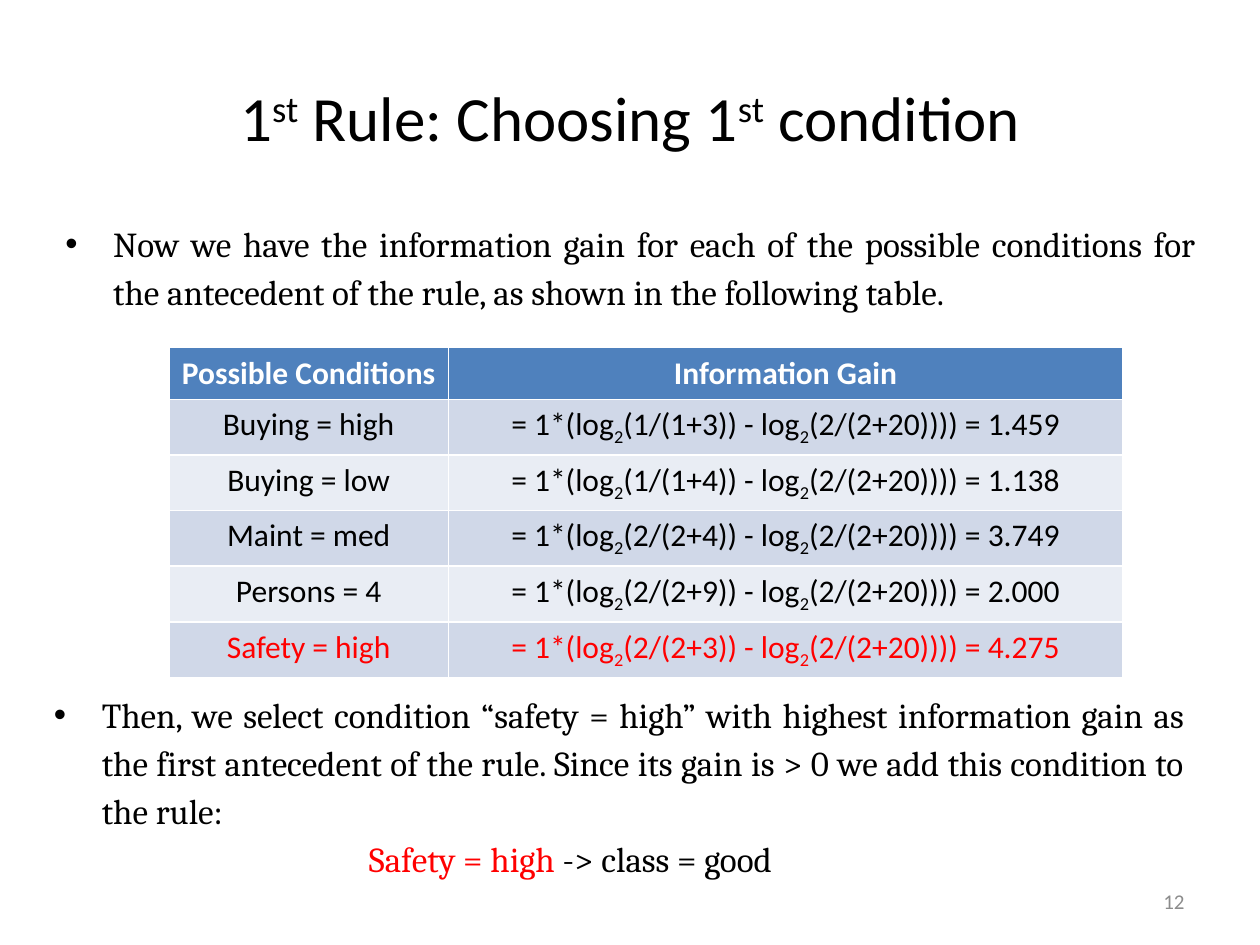
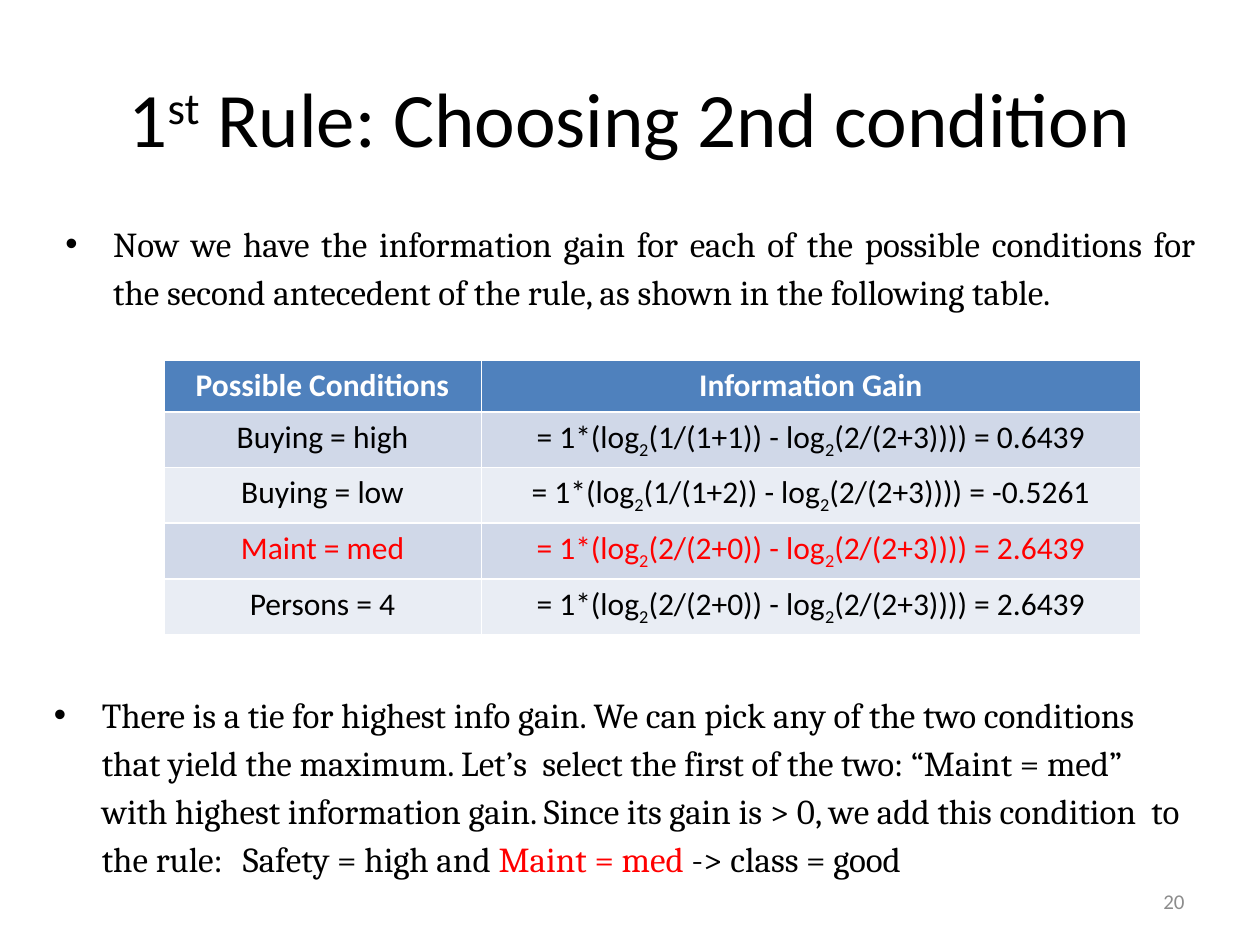
from dataclasses import dataclass

from lxml import etree
from pptx import Presentation
from pptx import util as u
from pptx.dml.color import RGBColor
from pptx.enum import text
from pptx.oxml import ns


@dataclass(frozen=True)
class Theme:
    """Colours, fonts and type sizes that the slides share."""

    ink: RGBColor = RGBColor(0x00, 0x00, 0x00)
    chosen: RGBColor = RGBColor(0xFF, 0x00, 0x00)
    header: RGBColor = RGBColor(0x4F, 0x81, 0xBD)
    header_ink: RGBColor = RGBColor(0xFF, 0xFF, 0xFF)
    bands: tuple = (RGBColor(0xD0, 0xD8, 0xE8), RGBColor(0xE9, 0xED, 0xF4))
    page_ink: RGBColor = RGBColor(0x8C, 0x8C, 0x8C)
    heading_font: str = "Calibri"
    body_font: str = "Cambria"
    body_size: int = 20
    table_size: int = 18
    page_size: int = 12
    superscript: int = 30
    subscript: int = -25
    line_spacing: float = 1.14


THEME = Theme()
ALIGN = text.PP_ALIGN
TITLE_BOX = (0.5, 0.3, 9, 1.25)
INTRO_BOX = (0.42, 1.67, 9.17, 0.87)
DECISION_BOX = (0.33, 5.41, 9.17, 1.64)
PAGE_BOX = (7.17, 6.95, 2.33, 0.4)
ROW_HEIGHT = 0.41
HANGING = 0.38
RULE_INDENT = 2.5


def inches(box):
    """Convert a box of numbers to lengths."""
    return [u.Inches(side) for side in box]


def style(paragraph, font_name, size, color, align):
    """Set the look that all runs of a paragraph share."""
    paragraph.alignment = align
    paragraph.font.name = font_name
    paragraph.font.size = u.Pt(size)
    paragraph.font.color.rgb = color


def add_scripted(paragraph, parts, baseline):
    """Write parts in turn, raising or lowering every second one."""
    for index, part in enumerate(parts):
        run = paragraph.add_run()
        run.text = part
        if index % 2:
            run.font._element.set("baseline", str(baseline * 1000))


def add_colored(paragraph, spans):
    """Write spans, each a text with its own colour."""
    for wording, color in spans:
        run = paragraph.add_run()
        run.text = wording
        run.font.color.rgb = color


def indent(paragraph, left, bullet=False):
    """Indent a paragraph, with a hanging bullet if wanted."""
    properties = paragraph._p.get_or_add_pPr()
    properties.set("marL", str(u.Inches(left)))
    properties.set("indent", str(-u.Inches(left) if bullet else 0))
    if bullet:
        font = etree.SubElement(properties, ns.qn("a:buFont"))
        font.set("typeface", "Arial")
        etree.SubElement(properties, ns.qn("a:buChar")).set("char", "•")


def add_title(slide, box, parts, size):
    """Place the title, whose ordinals are raised."""
    title = slide.shapes.title
    title.left, title.top, title.width, title.height = inches(box)
    title.text_frame.vertical_anchor = text.MSO_ANCHOR.MIDDLE
    heading = title.text_frame.paragraphs[0]
    style(heading, THEME.heading_font, size, THEME.ink, ALIGN.CENTER)
    add_scripted(heading, parts, THEME.superscript)


def add_body(slide, box, paragraphs, align):
    """Add a bullet, and any further paragraphs as indented rule lines."""
    body = slide.shapes.add_textbox(*inches(box)).text_frame
    body.word_wrap = True
    body.auto_size = text.MSO_AUTO_SIZE.SHAPE_TO_FIT_TEXT
    for index, spans in enumerate(paragraphs):
        paragraph = body.add_paragraph() if index else body.paragraphs[0]
        paragraph.line_spacing = THEME.line_spacing
        indent(paragraph, RULE_INDENT if index else HANGING, bullet=not index)
        style(paragraph, THEME.body_font, THEME.body_size, THEME.ink, align)
        add_colored(paragraph, spans)


def fill_cell(cell, parts, fill, color, bold=False):
    """Fill a table cell and write its centred text."""
    cell.fill.solid()
    cell.fill.fore_color.rgb = fill
    paragraph = cell.text_frame.paragraphs[0]
    style(paragraph, THEME.heading_font, THEME.table_size, color, ALIGN.CENTER)
    paragraph.font.bold = bold
    add_scripted(paragraph, parts, THEME.subscript)


def add_gains(slide, origin, widths, before, gains, chosen):
    """Add the table of information gains, with the chosen condition marked."""
    box = (*origin, sum(widths), ROW_HEIGHT * (len(gains) + 1))
    table = slide.shapes.add_table(len(gains) + 1, len(widths), *inches(box)).table
    for column, width in zip(table.columns, widths):
        column.width = u.Inches(width)
    for cell, label in zip(table.rows[0].cells, ("Possible Conditions", "Information Gain")):
        fill_cell(cell, [label], THEME.header, THEME.header_ink, bold=True)
    for index, (condition, after, gain) in enumerate(gains):
        band = THEME.bands[index % 2]
        color = THEME.chosen if condition == chosen else THEME.ink
        formula = ["= 1*(log", "2", f"({after}) - log", "2", f"({before}))) = {gain}"]
        condition_cell, gain_cell = table.rows[index + 1].cells
        fill_cell(condition_cell, [condition], band, color)
        fill_cell(gain_cell, formula, band, color)


def add_page_number(slide, box, number):
    """Add the page number at the lower right."""
    footer = slide.shapes.add_textbox(*inches(box)).text_frame
    footer.word_wrap = True
    footer.vertical_anchor = text.MSO_ANCHOR.MIDDLE
    paragraph = footer.paragraphs[0]
    style(paragraph, THEME.heading_font, THEME.page_size, THEME.page_ink, ALIGN.RIGHT)
    paragraph.add_run().text = str(number)


def add_condition_slide(deck, title, title_size, antecedent, table, decision, align, page):
    """Add a slide that compares the gains and picks one condition."""
    slide = deck.slides.add_slide(deck.slide_layouts.get_by_name("Title Only"))
    intro = (
        "Now we have the information gain for each of the possible conditions for "
        f"the {antecedent} of the rule, as shown in the following table."
    )
    add_title(slide, TITLE_BOX, title, title_size)
    add_body(slide, INTRO_BOX, [[(intro, THEME.ink)]], ALIGN.JUSTIFY)
    add_gains(slide, **table)
    add_body(slide, DECISION_BOX, decision, align)
    add_page_number(slide, PAGE_BOX, page)


def main():
    """Build and save the deck."""
    deck = Presentation()
    deck.slide_width, deck.slide_height = inches((10, 7.5))
    outcome = ("-> class = good", THEME.ink)
    add_condition_slide(
        deck,
        title=["1", "st", " Rule: Choosing 1", "st", " condition"],
        title_size=36,
        antecedent="antecedent",
        table=dict(
            origin=(1.34, 2.76),
            widths=(2.22, 5.35),
            before="2/(2+20)",
            gains=[
                ("Buying = high", "1/(1+3)", "1.459"),
                ("Buying = low", "1/(1+4)", "1.138"),
                ("Maint = med", "2/(2+4)", "3.749"),
                ("Persons = 4", "2/(2+9)", "2.000"),
                ("Safety = high", "2/(2+3)", "4.275"),
            ],
            chosen="Safety = high",
        ),
        decision=[
            [(
                "Then, we select condition “safety = high” with highest information gain "
                "as the first antecedent of the rule. Since its gain is > 0 we add this "
                "condition to the rule:",
                THEME.ink,
            )],
            [("Safety = high ", THEME.chosen), outcome],
        ],
        align=ALIGN.JUSTIFY,
        page=12,
    )
    add_condition_slide(
        deck,
        title=["1", "st", " Rule: Choosing 2nd condition"],
        title_size=44,
        antecedent="second antecedent",
        table=dict(
            origin=(1.3, 2.86),
            widths=(2.52, 5.23),
            before="2/(2+3)",
            gains=[
                ("Buying = high", "1/(1+1)", "0.6439"),
                ("Buying = low", "1/(1+2)", "-0.5261"),
                ("Maint = med", "2/(2+0)", "2.6439"),
                ("Persons = 4", "2/(2+0)", "2.6439"),
            ],
            chosen="Maint = med",
        ),
        decision=[[
            (
                "There is a tie for highest info gain. We can pick any of the two "
                "conditions that yield the maximum. Let’s  select the first of the two: "
                "“Maint = med” with highest information gain. Since its gain is > 0, we "
                "add this condition  to the rule: \tSafety = high and ",
                THEME.ink,
            ),
            ("Maint = med ", THEME.chosen),
            outcome,
        ]],
        align=ALIGN.LEFT,
        page=20,
    )
    deck.save("out.pptx")


if __name__ == "__main__":
    main()
